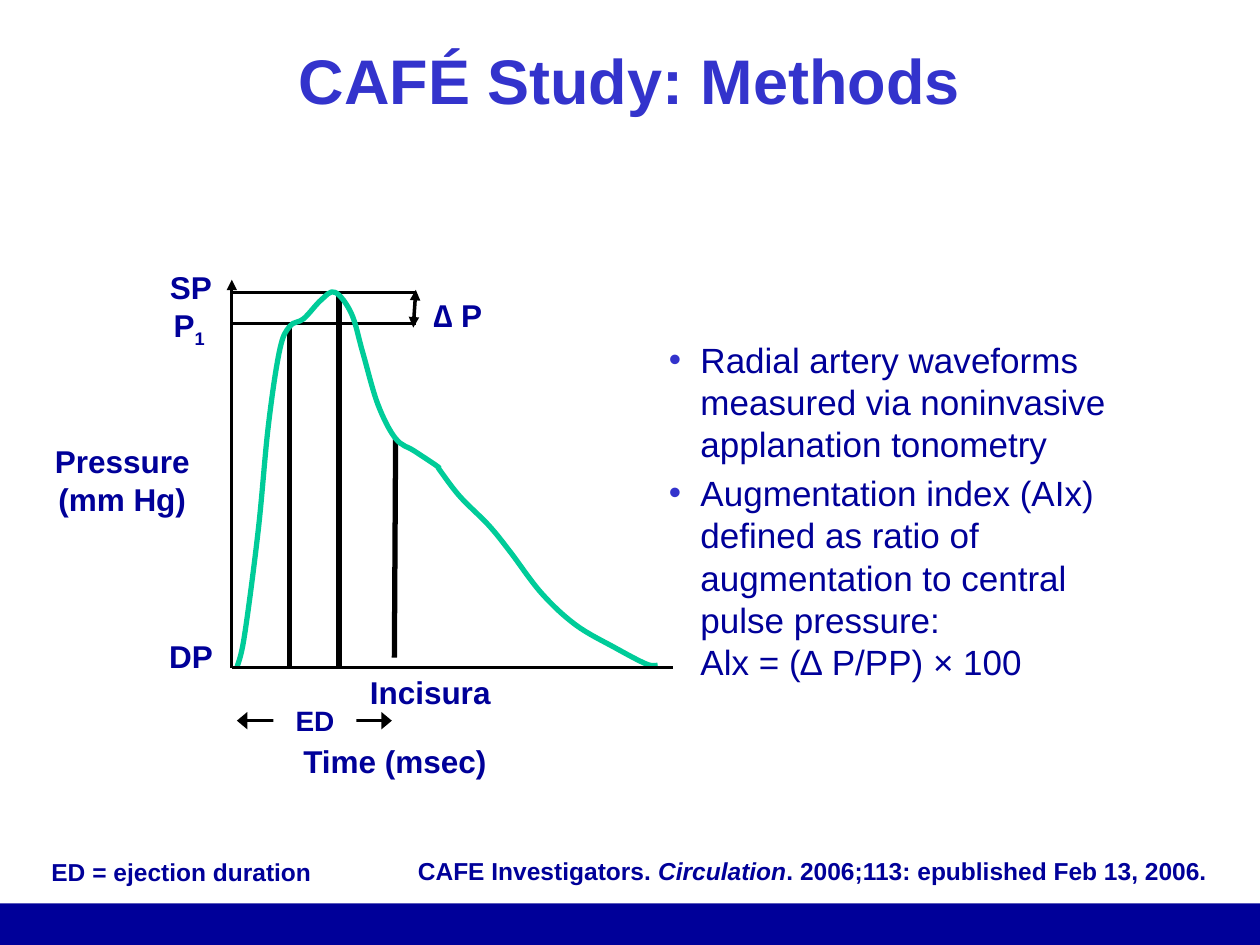
from dataclasses import dataclass

from lxml import etree
from pptx import Presentation
from pptx.dml.color import RGBColor
from pptx.enum.shapes import MSO_CONNECTOR, MSO_SHAPE
from pptx.enum.text import MSO_ANCHOR, PP_ALIGN
from pptx.oxml.ns import qn
from pptx.util import Inches, Pt


@dataclass(frozen=True)
class Theme:
    font: str = "Arial"
    navy: RGBColor = RGBColor(0x00, 0x00, 0x99)
    blue: RGBColor = RGBColor(0x33, 0x33, 0xCC)
    green: RGBColor = RGBColor(0x00, 0xCC, 0x99)
    black: RGBColor = RGBColor(0, 0, 0)
    white: RGBColor = RGBColor(255, 255, 255)
    title: int = 36
    body: int = 20
    label: int = 18
    duration: int = 16
    note: int = 14


THEME = Theme()

# Pulse wave, in inches from the top left corner of the plot
WAVE = [
    (0.04, 3.08), (0.10, 2.83), (0.21, 1.99), (0.29, 1.16), (0.38, 0.56),
    (0.46, 0.37), (0.57, 0.31), (0.71, 0.16), (0.82, 0.10), (0.95, 0.27),
    (1.04, 0.58), (1.16, 0.99), (1.30, 1.26), (1.45, 1.36), (1.63, 1.48),
    (1.65, 1.51), (1.81, 1.72), (2.04, 1.95), (2.21, 2.16), (2.46, 2.49),
    (2.73, 2.74), (3.04, 2.92), (3.29, 3.05), (3.38, 3.06),
]


def style(p, size, bold=True, color=THEME.navy, align=PP_ALIGN.LEFT):
    p.alignment = align
    for r in p.runs:
        r.font.name, r.font.size, r.font.bold = THEME.font, Pt(size), bold
        r.font.color.rgb = color


def add_text(s, box, text, size, align=PP_ALIGN.LEFT, color=THEME.navy,
             wrap=False, inset=(0.1, 0.05)):
    tf = s.shapes.add_textbox(*map(Inches, box)).text_frame
    tf.word_wrap = wrap
    tf.margin_left = tf.margin_right = Inches(inset[0])
    tf.margin_top = tf.margin_bottom = Inches(inset[1])
    tf.text = text
    style(tf.paragraphs[0], size, color=color, align=align)
    return tf


def add_line(s, start, end, width, heads=(), head_width="med"):
    """Draw a black line; heads holds "headEnd" and/or "tailEnd"."""
    c = s.shapes.add_connector(MSO_CONNECTOR.STRAIGHT,
                               *map(Inches, (*start, *end)))
    c.line.color.rgb, c.line.width = THEME.black, Pt(width)
    for head in heads:
        etree.SubElement(c.line._get_or_add_ln(), qn("a:" + head),
                         type="triangle", w=head_width)
    etree.SubElement(c._element.spPr, qn("a:effectLst"))


def add_box(s, box, color):
    sp = s.shapes.add_shape(MSO_SHAPE.RECTANGLE, *map(Inches, box))
    sp.shadow.inherit = False
    sp.fill.solid()
    sp.fill.fore_color.rgb = color
    sp.line.fill.background()
    return sp


def curve_segments(sp):
    """Turn the straight segments of a freeform into Catmull-Rom curves."""
    nodes = [(int(pt.get("x")), int(pt.get("y")))
             for pt in sp._element.iter(qn("a:pt"))]
    padded = [nodes[0], *nodes, nodes[-1]]
    segments = list(sp._element.iter(qn("a:lnTo")))
    for seg, a, b, c, d in zip(segments, padded, padded[1:], padded[2:], padded[3:]):
        leave = [q + (r - p) / 6 for p, q, r in zip(a, b, c)]
        arrive = [q - (r - p) / 6 for p, q, r in zip(b, c, d)]
        cubic = etree.Element(qn("a:cubicBezTo"))
        for x, y in (leave, arrive, c):
            etree.SubElement(cubic, qn("a:pt"), x=str(round(x)), y=str(round(y)))
        seg.getparent().replace(seg, cubic)


def add_wave(s, left, top):
    points = [(Inches(left + x), Inches(top + y)) for x, y in WAVE]
    builder = s.shapes.build_freeform(*points[0])
    builder.add_line_segments(points[1:], close=False)
    sp = builder.convert_to_shape()
    curve_segments(sp)
    sp.shadow.inherit = False
    sp.fill.background()
    sp.line.color.rgb, sp.line.width = THEME.green, Pt(3)


def add_plot(s, left, top, width, height):
    def at(x, y):
        return left + x, top + y

    both = ("headEnd", "tailEnd")
    add_line(s, at(0, height), at(0, 0), 1.5, ("tailEnd",))
    labels = [
        ("Pressure\v(mm Hg)", -1.51, 1.24, 1.28, 0.71, PP_ALIGN.CENTER),
        ("∆ P", 1.5, 0.08, 0.59, 0.4, PP_ALIGN.LEFT),
        ("SP", -0.59, -0.14, 0.54, 0.4, PP_ALIGN.LEFT),
        ("P", -0.56, 0.16, 0.46, 0.4, PP_ALIGN.LEFT),
        ("DP", -0.6, 2.79, 0.55, 0.4, PP_ALIGN.CENTER),
        ("Incisura", 0.99, 3.07, 1.17, 0.4, PP_ALIGN.CENTER),
        ("Time (msec)", 0.46, 3.62, 1.67, 0.4, PP_ALIGN.CENTER),
    ]
    for text, x, y, w, h, align in labels:
        tf = add_text(s, (*at(x, y), w, h), text, THEME.label, align)
        if text == "P":
            p = tf.paragraphs[0]
            r = p.add_run()
            r.text = "1"
            style(p, THEME.label)
            r.font._element.set("baseline", "-25000")

    add_line(s, at(0.04, 3.5), at(1.27, 3.5), 1.5, both, "lg")
    tf = add_box(s, (*at(0.33, 3.31), 0.66, 0.37), THEME.white).text_frame
    tf.text = "ED"
    style(tf.paragraphs[0], THEME.duration, align=PP_ALIGN.CENTER)

    for y in (0.1, 0.35):
        add_line(s, at(0.01, y), at(1.46, y), 1.5)
    add_line(s, at(1.46, 0.08), at(1.44, 0.38), 2, both)
    for x, y, foot_x, foot_y in [(0.46, 0.35, 0.46, height),
                                 (0.85, 0.1, 0.85, height),
                                 (1.3, 1.25, 1.29, 3)]:
        add_line(s, at(x, y), at(foot_x, foot_y), 3)
    add_wave(s, left, top)
    add_line(s, at(0, height), at(width, height), 1.5)


def add_title(s, *box):
    tf = add_text(s, box, "CAFÉ Study: Methods", THEME.title, PP_ALIGN.CENTER,
                  THEME.blue, wrap=True, inset=(0, 0))
    tf.paragraphs[0].line_spacing = 0.9


def add_bullets(s, *box):
    items = [
        "Radial artery waveforms measured via noninvasive applanation tonometry",
        "Augmentation index (AIx) defined as ratio of augmentation to central "
        "pulse pressure: \vAlx = (∆ P/PP) × 100",
    ]
    tf = add_text(s, box, "\n".join(items), THEME.body, wrap=True, inset=(0, 0))
    for p in tf.paragraphs:
        style(p, THEME.body, bold=False)
        p.space_before = Pt(4)
        pPr = p._p.get_or_add_pPr()
        pPr.set("marL", str(Inches(0.25)))
        pPr.set("indent", str(-Inches(0.25)))
        color = etree.SubElement(pPr, qn("a:buClr"))
        etree.SubElement(color, qn("a:srgbClr"), val=str(THEME.blue))
        etree.SubElement(pPr, qn("a:buFont"), typeface=THEME.font)
        etree.SubElement(pPr, qn("a:buChar"), char="•")


def add_bar(s, *box):
    add_box(s, box, THEME.navy)


def add_notes_line(s, left, top):
    tf = add_text(s, (left + 2.94, top, 6.33, 0.33), "CAFE Investigators. ",
                  THEME.note, wrap=True, inset=(0, 0.05))
    tf.vertical_anchor = MSO_ANCHOR.BOTTOM
    p = tf.paragraphs[0]
    for text, italic in (("Circulation", True),
                         (". 2006;113: epublished Feb 13, 2006.", False)):
        r = p.add_run()
        r.text, r.font.italic = text, italic
    style(p, THEME.note, align=PP_ALIGN.RIGHT)
    add_text(s, (left, top, 2.27, 0.34), "ED = ejection duration", THEME.note)


def main():
    prs = Presentation()
    prs.slide_width, prs.slide_height = Inches(10), Inches(7.5)
    s = prs.slides.add_slide(prs.slide_layouts[6])
    add_bar(s, 0, 7.17, 10, 0.33)
    add_title(s, 0.84, 0.4, 8.31, 0.46)
    add_bullets(s, 5.31, 2.69, 3.86, 3.03)
    add_notes_line(s, 0.31, 6.75)
    add_plot(s, 1.84, 2.22, 3.5, 3.08)
    prs.save("out.pptx")


if __name__ == "__main__":
    main()
